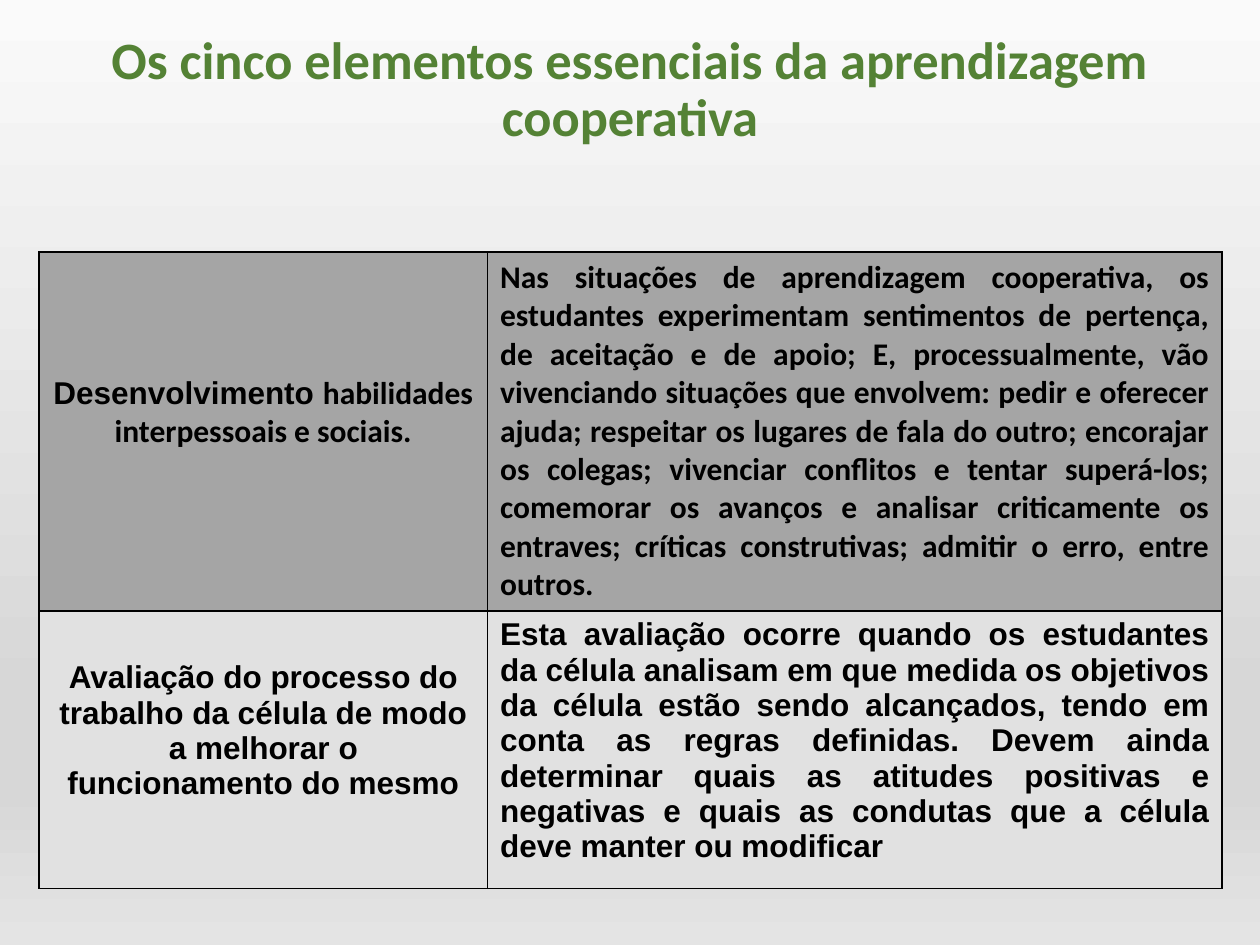
"""Build the slide on the essential elements of cooperative learning."""
from pptx import Presentation
from pptx.dml.color import RGBColor
from pptx.enum.text import MSO_ANCHOR, PP_ALIGN
from pptx.oxml import parse_xml
from pptx.oxml.ns import nsdecls
from pptx.util import Inches, Pt

COLORS = {"title": "548235", "text": "000000", "border": "000000",
          "dark": "A5A5A5", "light": "E1E1E1"}
BACKGROUND = [(0, "FAFAFA"), (74, "D7D7D7"), (83, "D7D7D7"), (100, "E4E4E4")]
ROWS = [
    ("dark", 2.85,
     [("Desenvolvimento ", "Arial"),
      ("habilidades interpessoais e sociais.", "Calibri")],
     [("Nas situações de aprendizagem cooperativa, os estudantes experimentam "
       "sentimentos de pertença, de aceitação e de apoio; E, processualmente, "
       "vão vivenciando situações que envolvem: pedir e oferecer ajuda; "
       "respeitar os lugares de fala do outro; encorajar os colegas; vivenciar "
       "conflitos e tentar superá-los; comemorar os avanços e analisar "
       "criticamente os entraves; críticas construtivas; admitir o erro, "
       "entre outros.", "Calibri")]),
    ("light", 2.06,
     [("Avaliação do processo do trabalho da célula de modo a melhorar o "
       "funcionamento do mesmo", "Arial")],
     [("Esta avaliação ocorre quando os estudantes da célula analisam em que "
       "medida os objetivos da célula estão sendo alcançados, tendo em conta "
       "as regras definidas. Devem ainda determinar quais as atitudes "
       "positivas e negativas e quais as condutas que a célula deve manter ou "
       "modificar", "Arial")]),
]


def add_run(p, text, font, size, color):
    r = p.add_run()
    r.text = text
    r.font.name = font
    r.font.size = Pt(size)
    r.font.bold = True
    r.font.color.rgb = RGBColor.from_string(COLORS[color])


def add_borders(cell):
    tcPr = cell._tc.get_or_add_tcPr()
    for i, side in enumerate(("lnL", "lnR", "lnT", "lnB")):
        tcPr.insert(i, parse_xml(
            f'<a:{side} {nsdecls("a")} w="{Pt(1)}"><a:solidFill>'
            f'<a:srgbClr val="{COLORS["border"]}"/></a:solidFill></a:{side}>'))


prs = Presentation()
prs.slide_width, prs.slide_height = Inches(10), Inches(7.5)
s = prs.slides.add_slide(prs.slide_layouts[6])

stops = "".join(f'<a:gs pos="{pos * 1000}"><a:srgbClr val="{color}"/></a:gs>'
                for pos, color in BACKGROUND)
s.element.cSld.insert(0, parse_xml(
    f'<p:bg {nsdecls("p", "a")}><p:bgPr><a:gradFill rotWithShape="1">'
    f'<a:gsLst>{stops}</a:gsLst><a:lin ang="5400000" scaled="0"/></a:gradFill>'
    '<a:effectLst/></p:bgPr></p:bg>'))

title = s.shapes.add_textbox(Inches(0.69), Inches(0.08), Inches(8.62), Inches(1.28))
tf = title.text_frame
tf.word_wrap = True
tf.vertical_anchor = MSO_ANCHOR.MIDDLE
p = tf.paragraphs[0]
p.alignment = PP_ALIGN.CENTER
p.line_spacing = 0.9
add_run(p, "Os cinco elementos essenciais da aprendizagem cooperativa",
        "Calibri", 30, "title")

table = s.shapes.add_table(2, 2, Inches(0.31), Inches(2), Inches(9.39), Inches(4.91)).table
table.first_row = table.horz_banding = False
for column, width in zip(table.columns, (3.56, 5.83)):
    column.width = Inches(width)

for i, (fill, height, *contents) in enumerate(ROWS):
    table.rows[i].height = Inches(height)
    for j, runs in enumerate(contents):
        cell = table.cell(i, j)
        cell.fill.solid()
        cell.fill.fore_color.rgb = RGBColor.from_string(COLORS[fill])
        add_borders(cell)
        p = cell.text_frame.paragraphs[0]
        p.alignment = PP_ALIGN.JUSTIFY
        if j == 0:
            p.alignment = PP_ALIGN.CENTER
            cell.vertical_anchor = MSO_ANCHOR.MIDDLE
            cell.margin_bottom = Inches(0.35)
        for text, font in runs:
            add_run(p, text, font, 18, "text")

prs.save("out.pptx")
